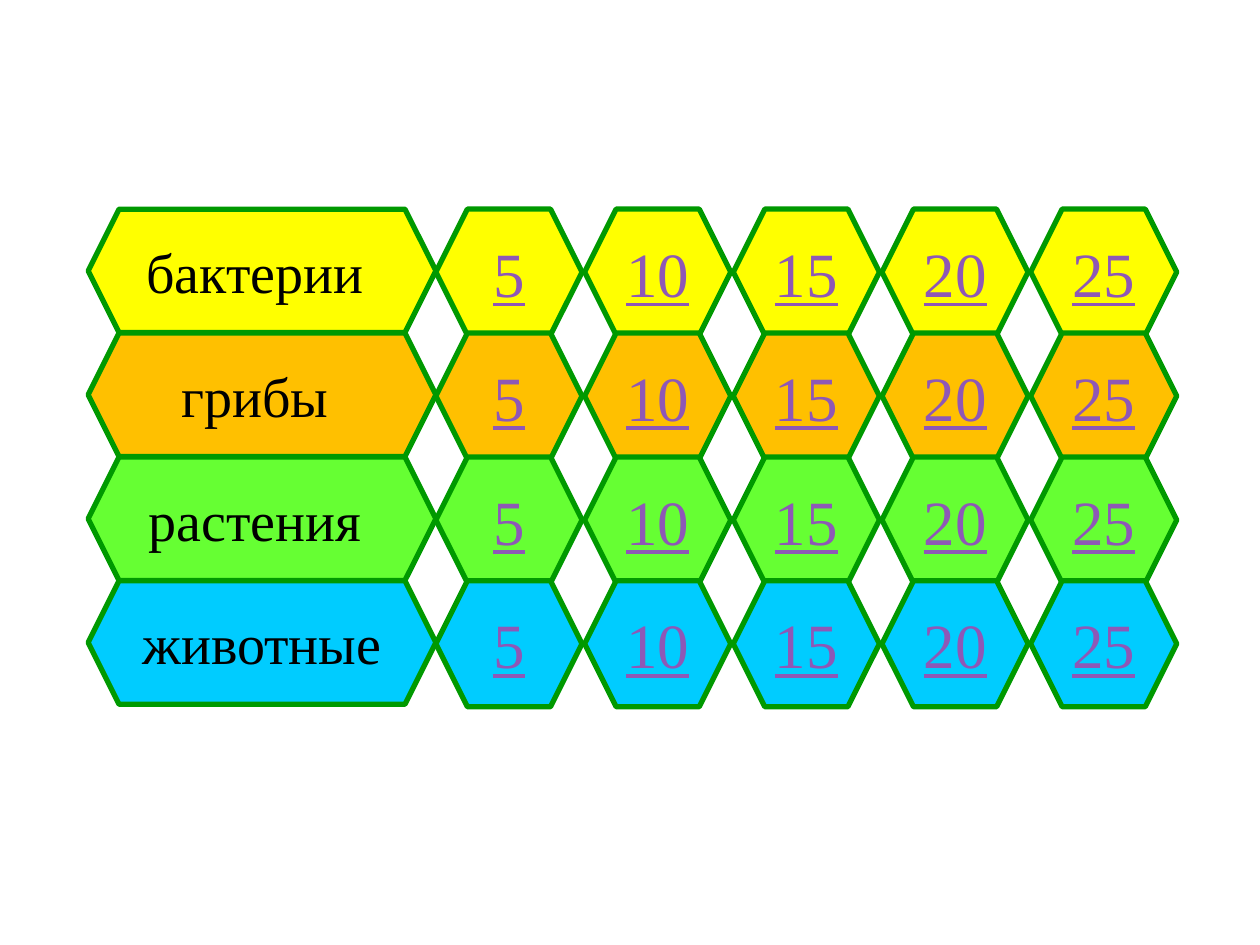
from lxml import etree
from pptx import Presentation
from pptx.dml.color import RGBColor
from pptx.enum.shapes import MSO_SHAPE
from pptx.enum.text import MSO_ANCHOR, PP_ALIGN
from pptx.oxml import parse_xml
from pptx.oxml.ns import nsdecls
from pptx.util import Inches, Pt

BLACK = RGBColor(0x00, 0x00, 0x00)
PURPLE = RGBColor(0x8E, 0x58, 0xB6)
GREEN = RGBColor(0x00, 0x99, 0x00)
YELLOW = RGBColor(0xFF, 0xFF, 0x00)
ORANGE = RGBColor(0xFF, 0xC0, 0x00)
LIME = RGBColor(0x66, 0xFF, 0x33)
SKY = RGBColor(0x00, 0xCC, 0xFF)

# The space after each name sets it slightly left of centre.
CATEGORIES = [
    ("бактерии ", YELLOW),
    ("грибы ", ORANGE),
    ("растения ", LIME),
    ("животные ", SKY),
]
POINTS = [5, 10, 15, 20, 25]

LEFT, TOP = 0.7, 1.66
ROW_STEP = 2.95 / 3
LABEL_WIDTH, LABEL_HEIGHT = 2.76, 0.98
CELL_WIDTH, CELL_HEIGHT = 1.16, 1
CELL_STEP = 1.18

prs = Presentation()
prs.slide_width, prs.slide_height = Inches(10), Inches(7.5)
slide = prs.slides.add_slide(prs.slide_layouts[6])


def add_hexagon(text, left, top, width, height, *, fill, size, color, underline=None):
    hexagon = slide.shapes.add_shape(
        MSO_SHAPE.HEXAGON, Inches(left), Inches(top), Inches(width), Inches(height))
    hexagon.shadow.inherit = False
    hexagon.fill.solid()
    hexagon.fill.fore_color.rgb = fill
    hexagon.line.color.rgb = GREEN
    hexagon.line.width = Pt(3)

    frame = hexagon.text_frame
    frame.vertical_anchor = MSO_ANCHOR.MIDDLE
    paragraph = frame.paragraphs[0]
    paragraph.alignment = PP_ALIGN.CENTER
    run = paragraph.add_run()
    run.text = text
    run.font.name = "Times New Roman"
    run.font.size = Pt(size)
    run.font.underline = underline
    run.font.color.rgb = color
    outline = parse_xml(f'<a:ln {nsdecls("a")} w="{Pt(0.75)}"/>')
    solid = etree.SubElement(outline, "{%s}solidFill" % outline.nsmap["a"])
    etree.SubElement(solid, "{%s}srgbClr" % outline.nsmap["a"], val=str(BLACK))
    run._r.get_or_add_rPr().insert(0, outline)


for row, (category, fill) in enumerate(CATEGORIES):
    top = TOP + row * ROW_STEP
    add_hexagon(category, LEFT, top, LABEL_WIDTH, LABEL_HEIGHT,
                fill=fill, size=32, color=BLACK)
    for column, points in enumerate(POINTS):
        left = LEFT + LABEL_WIDTH + column * CELL_STEP
        add_hexagon(str(points), left, top, CELL_WIDTH, CELL_HEIGHT,
                    fill=fill, size=36, color=PURPLE, underline=True)

prs.save("out.pptx")
